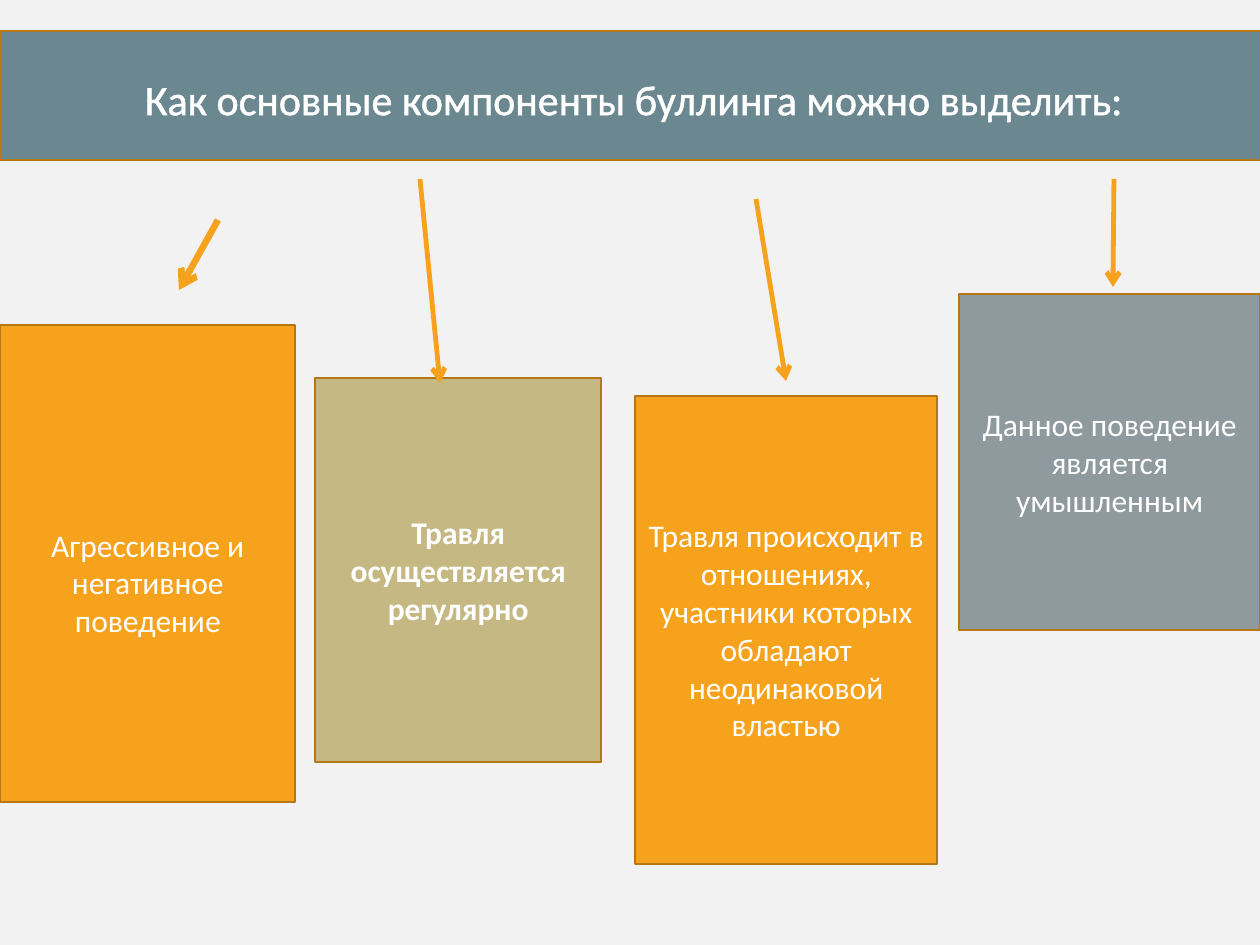
from dataclasses import dataclass

from lxml.etree import SubElement
from pptx import Presentation
from pptx.dml.color import RGBColor
from pptx.enum.shapes import MSO_CONNECTOR, MSO_SHAPE
from pptx.enum.text import MSO_ANCHOR, PP_ALIGN
from pptx.oxml.ns import qn
from pptx.slide import Slide
from pptx.util import Emu, Pt


@dataclass(frozen=True)
class Theme:
    back: str = "F2F2F2"
    teal: str = "6B8891"
    sand: str = "C5B883"
    gold: str = "F6A21D"
    gray: str = "8E9A9E"
    edge: str = "B67815"
    text: str = "FFFFFF"
    font: str = "Calibri"
    head: int = 24
    body: int = 18
    rim: float = 1.45


@dataclass(frozen=True)
class Box:
    text: str
    left: int
    top: int
    width: int
    height: int
    fill: str
    size: int
    bold: bool = False
    rim: float = 0
    inset_left: int = 13
    inset_top: int = 6


@dataclass(frozen=True)
class Arrow:
    start: tuple[int, int]
    end: tuple[int, int]
    weight: float = 2.75


THEME = Theme()
WIDTH, HEIGHT = 1260, 945

BOXES = [
    Box("Как основные компоненты буллинга можно выделить:",
        0, 31, WIDTH, 129, THEME.teal, THEME.head, rim=THEME.rim,
        inset_left=20, inset_top=12),
    Box("Травля осуществляется регулярно",
        315, 378, 286, 384, THEME.sand, THEME.body, bold=True),
    Box("Агрессивное и негативное поведение",
        0, 325, 295, 477, THEME.gold, THEME.body, inset_top=44),
    Box("Травля происходит в отношениях, участники которых обладают "
        "неодинаковой властью",
        635, 396, 302, 468, THEME.gold, THEME.body),
    Box("Данное поведение является умышленным",
        959, 294, 301, 336, THEME.gray, THEME.body),
]

ARROWS = [
    Arrow((218, 220), (179, 290), 3.75),
    Arrow((420, 179), (440, 383)),
    Arrow((756, 199), (786, 381)),
    Arrow((1114, 179), (1113, 287)),
]


def px(count: int) -> Emu:
    return Emu(round(count * 914400 / 126))


def color(code: str) -> RGBColor:
    return RGBColor.from_string(code)


def draw_box(slide: Slide, box: Box) -> None:
    shape = slide.shapes.add_shape(
        MSO_SHAPE.RECTANGLE,
        px(box.left), px(box.top), px(box.width), px(box.height))
    shape.shadow.inherit = False
    shape.fill.solid()
    shape.fill.fore_color.rgb = color(box.fill)
    shape.line.color.rgb = color(THEME.edge)
    shape.line.width = Pt(1)
    frame = shape.text_frame
    frame.word_wrap = True
    frame.vertical_anchor = MSO_ANCHOR.MIDDLE
    frame.margin_left = px(box.inset_left)
    frame.margin_top = px(box.inset_top)
    frame.text = box.text
    par = frame.paragraphs[0]
    par.alignment = PP_ALIGN.CENTER
    font = par.runs[0].font
    font.name = THEME.font
    font.size = Pt(box.size)
    font.bold = box.bold
    font.color.rgb = color(THEME.text)
    if box.rim:
        props = par.runs[0]._r.get_or_add_rPr()
        line = SubElement(props, qn("a:ln"), w=str(Pt(box.rim)))
        fill = SubElement(line, qn("a:solidFill"))
        SubElement(fill, qn("a:srgbClr"), val=THEME.text)
        props.insert(0, line)


def draw_arrow(slide: Slide, arrow: Arrow) -> None:
    link = slide.shapes.add_connector(
        MSO_CONNECTOR.STRAIGHT,
        *map(px, arrow.start), *map(px, arrow.end))
    link.line.color.rgb = color(THEME.gold)
    link.line.width = Pt(arrow.weight)
    SubElement(link.line._get_or_add_ln(), qn("a:tailEnd"), type="arrow")
    SubElement(link._element.spPr, qn("a:effectLst"))


def main() -> None:
    deck = Presentation()
    deck.slide_width, deck.slide_height = px(WIDTH), px(HEIGHT)
    slide = deck.slides.add_slide(deck.slide_layouts[6])
    slide.background.fill.solid()
    slide.background.fill.fore_color.rgb = color(THEME.back)
    for box in BOXES:
        draw_box(slide, box)
    for arrow in ARROWS:
        draw_arrow(slide, arrow)
    deck.save("out.pptx")


if __name__ == "__main__":
    main()
